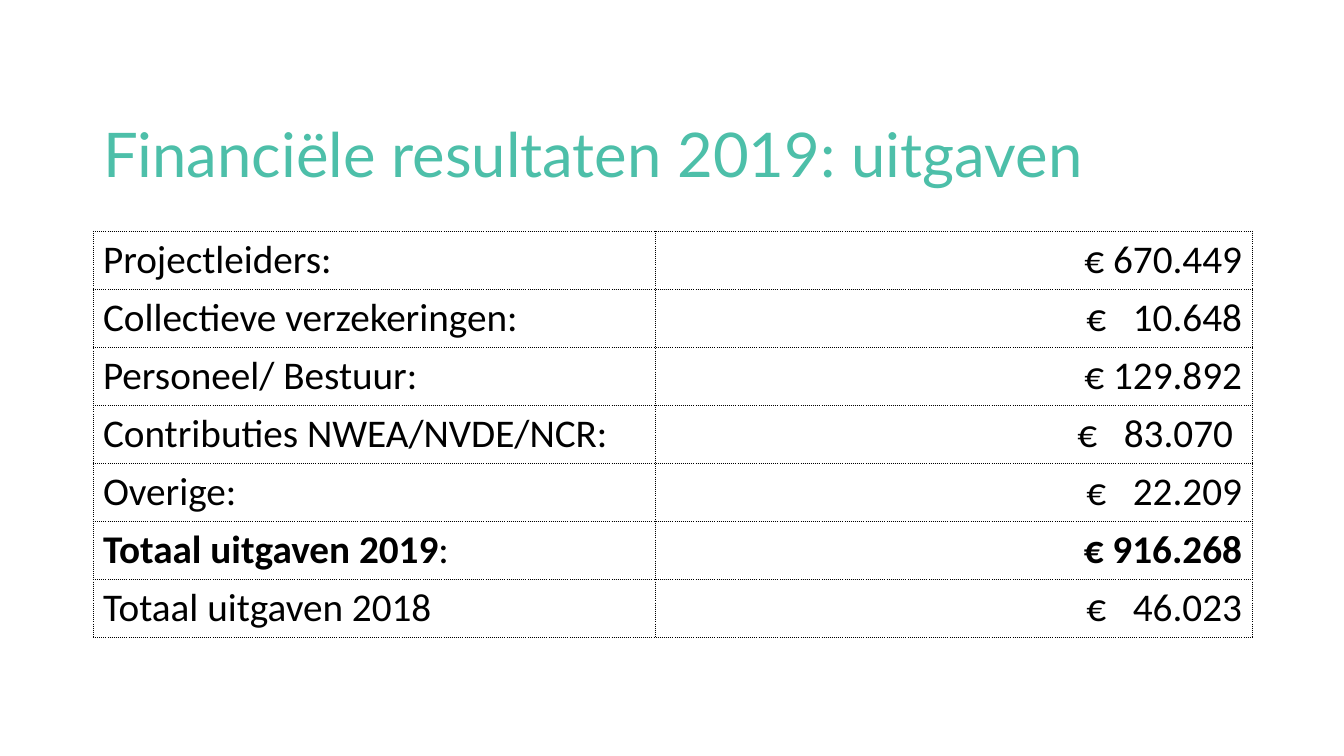
import dataclasses

import lxml.etree
import pptx
import pptx.dml.color
import pptx.enum.text
import pptx.oxml.ns
import pptx.slide
import pptx.table
import pptx.text.text
import pptx.util

EMU_PER_PX = 914400 / 100.8
COLORS = {"title": "4DBFA9", "text": "000000", "border": "000000", "cell": "FFFFFF"}
LEFT, WIDTH = 93, 1159
TITLE_TOP, TITLE_HEIGHT = 85, 146
TABLE_TOP, ROW_HEIGHT = 231, 58
COLUMN_WIDTHS = (562, 597)
CELL_MARGIN = 10
BORDER_EMU = 3175
WIDE_GAP = 1270  # hundredths of a point, two spaces at 28 pt


@dataclasses.dataclass(frozen=True)
class Expense:
    label: str
    amount: str
    bold: bool = False
    label_end: str = ""
    wide_gap: bool = False
    right_margin: int = CELL_MARGIN


EXPENSES = (
    Expense("Projectleiders:", "670.449"),
    Expense("Collectieve verzekeringen:", "10.648", wide_gap=True),
    Expense("Personeel/ Bestuur:", "129.892"),
    Expense("Contributies NWEA/NVDE/NCR:", "83.070", wide_gap=True, right_margin=19),
    Expense("Overige:", "22.209", wide_gap=True),
    Expense("Totaal uitgaven 2019", "916.268", bold=True, label_end=":"),
    Expense("Totaal uitgaven 2018", "46.023", wide_gap=True),
)


def px(length: int) -> pptx.util.Emu:
    return pptx.util.Emu(round(length * EMU_PER_PX))


def add_run(
    paragraph: pptx.text.text._Paragraph,
    text: str,
    size: int = 28,
    font_name: str = "Calibri",
    color: str = "text",
    bold: bool = False,
) -> pptx.text.text._Run:
    run = paragraph.add_run()
    run.text = text
    run.font.name = font_name
    run.font.size = pptx.util.Pt(size)
    run.font.bold = bold
    run.font.color.rgb = pptx.dml.color.RGBColor.from_string(COLORS[color])
    return run


def format_cell(cell: pptx.table._Cell) -> None:
    """Give the cell dotted borders on all sides and a plain fill."""
    properties = cell._tc.get_or_add_tcPr()
    for side in ("lnL", "lnR", "lnT", "lnB"):
        line = lxml.etree.SubElement(
            properties, pptx.oxml.ns.qn(f"a:{side}"), w=str(BORDER_EMU)
        )
        fill = lxml.etree.SubElement(line, pptx.oxml.ns.qn("a:solidFill"))
        lxml.etree.SubElement(fill, pptx.oxml.ns.qn("a:srgbClr"), val=COLORS["border"])
        lxml.etree.SubElement(line, pptx.oxml.ns.qn("a:prstDash"), val="sysDot")
    cell.fill.solid()
    cell.fill.fore_color.rgb = pptx.dml.color.RGBColor.from_string(COLORS["cell"])


def fill_row(table: pptx.table.Table, row: int, expense: Expense) -> None:
    label_cell, amount_cell = table.cell(row, 0), table.cell(row, 1)
    for cell in (label_cell, amount_cell):
        format_cell(cell)
    label = label_cell.text_frame.paragraphs[0]
    add_run(label, expense.label, bold=expense.bold)
    if expense.label_end:
        add_run(label, expense.label_end)

    amount_cell.margin_right = px(expense.right_margin)
    amount = amount_cell.text_frame.paragraphs[0]
    amount.alignment = pptx.enum.text.PP_ALIGN.RIGHT
    if expense.wide_gap:
        add_run(amount, "€", bold=expense.bold)
        gap = add_run(amount, " ", bold=expense.bold)
        gap._r.get_or_add_rPr().set("spc", str(WIDE_GAP))
        add_run(amount, expense.amount, bold=expense.bold)
    else:
        add_run(amount, f"€ {expense.amount}", bold=expense.bold)


def add_title(slide: pptx.slide.Slide) -> None:
    title = slide.shapes.title
    title.left, title.top = px(LEFT), px(TITLE_TOP)
    title.width, title.height = px(WIDTH), px(TITLE_HEIGHT)
    title.text_frame.word_wrap = True
    title.text_frame.vertical_anchor = pptx.enum.text.MSO_ANCHOR.MIDDLE
    paragraph = title.text_frame.paragraphs[0]
    paragraph.alignment = pptx.enum.text.PP_ALIGN.LEFT
    paragraph.line_spacing = 0.9
    add_run(paragraph, "Financiële resultaten 2019: uitgaven", 44, "Lato", "title")


def add_expense_table(slide: pptx.slide.Slide) -> None:
    table = slide.shapes.add_table(
        len(EXPENSES), len(COLUMN_WIDTHS), px(LEFT), px(TABLE_TOP),
        px(WIDTH), px(ROW_HEIGHT * len(EXPENSES)),
    ).table
    table.first_row = False
    table.horz_banding = False
    for column, width in zip(table.columns, COLUMN_WIDTHS):
        column.width = px(width)
    for row, expense in enumerate(EXPENSES):
        table.rows[row].height = px(ROW_HEIGHT)
        fill_row(table, row, expense)


def main() -> None:
    presentation = pptx.Presentation()
    presentation.slide_width, presentation.slide_height = px(1344), px(756)
    slide = presentation.slides.add_slide(presentation.slide_layouts[5])
    add_title(slide)
    add_expense_table(slide)
    presentation.save("out.pptx")


if __name__ == "__main__":
    main()
